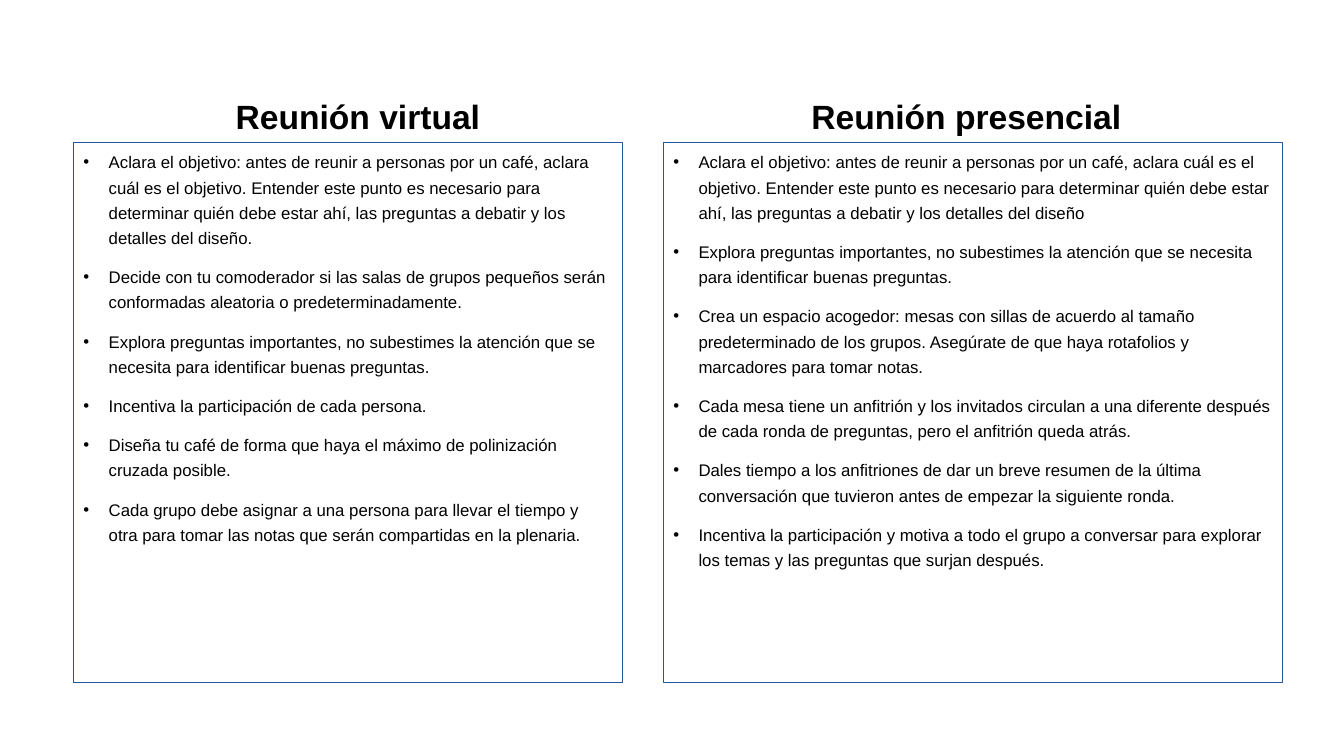
from dataclasses import dataclass

from lxml import etree
from pptx import Presentation
from pptx.dml.color import RGBColor
from pptx.enum.shapes import MSO_SHAPE
from pptx.enum.text import MSO_ANCHOR, PP_ALIGN
from pptx.oxml.ns import qn
from pptx.util import Inches, Pt

RECTANGLE = MSO_SHAPE.RECTANGLE
TOP, BOTTOM = MSO_ANCHOR.TOP, MSO_ANCHOR.BOTTOM
LEFT, CENTER = PP_ALIGN.LEFT, PP_ALIGN.CENTER

# Each column: heading, (left, width) of heading, (left, width) of panel, points
COLUMNS = [
    ("Reunión virtual", (0.73, 5.64), (0.73, 5.44), [
        "Aclara el objetivo: antes de reunir a personas por un café, aclara cuál es el "
        "objetivo. Entender este punto es necesario para determinar quién debe estar ahí, "
        "las preguntas a debatir y los detalles del diseño.",
        "Decide con tu comoderador si las salas de grupos pequeños serán conformadas "
        "aleatoria o predeterminadamente.",
        "Explora preguntas importantes, no subestimes la atención que se necesita para "
        "identificar buenas preguntas.",
        "Incentiva la participación de cada persona.",
        "Diseña tu café de forma que haya el máximo de polinización cruzada posible.",
        "Cada grupo debe asignar a una persona para llevar el tiempo y otra para tomar las "
        "notas que serán compartidas en la plenaria.",
    ]),
    ("Reunión presencial", (6.75, 5.67), (6.58, 6.14), [
        "Aclara el objetivo: antes de reunir a personas por un café, aclara cuál es el "
        "objetivo. Entender este punto es necesario para determinar quién debe estar ahí, "
        "las preguntas a debatir y los detalles del diseño",
        "Explora preguntas importantes, no subestimes la atención que se necesita para "
        "identificar buenas preguntas.",
        "Crea un espacio acogedor: mesas con sillas de acuerdo al tamaño predeterminado de "
        "los grupos. Asegúrate de que haya rotafolios y marcadores para tomar notas.",
        "Cada mesa tiene un anfitrión y los invitados circulan a una diferente después de "
        "cada ronda de preguntas, pero el anfitrión queda atrás.",
        "Dales tiempo a los anfitriones de dar un breve resumen de la última conversación "
        "que tuvieron antes de empezar la siguiente ronda.",
        "Incentiva la participación y motiva a todo el grupo a conversar para explorar los "
        "temas y las preguntas que surjan después.",
    ]),
]
HEADING_TOP, HEADING_HEIGHT = 0.51, 0.9
PANEL_TOP, PANEL_HEIGHT = HEADING_TOP + HEADING_HEIGHT, 5.36


@dataclass(frozen=True)
class Theme:
    font: str = "Arial"
    text: RGBColor = RGBColor(0, 0, 0)
    border: RGBColor = RGBColor(0x26, 0x55, 0xA6)
    border_width: float = 0.75
    heading_size: int = 24
    body_size: int = 12
    heading_spacing: float = 0.9
    body_spacing: float = 1.25
    space_before: int = 10
    bullet_indent: float = 0.25


THEME = Theme()


def write_paragraphs(text_frame, texts, size, spacing, alignment, bold=False):
    text_frame.word_wrap = True
    text_frame.text = "\n".join(texts)
    for paragraph in text_frame.paragraphs:
        paragraph.alignment = alignment
        paragraph.line_spacing = spacing
        paragraph.space_before = Pt(THEME.space_before)
        for run in paragraph.runs:
            run.font.name = THEME.font
            run.font.size = Pt(size)
            run.font.bold = bold
            run.font.color.rgb = THEME.text


def add_bullet(paragraph):
    properties = paragraph._p.get_or_add_pPr()
    indent = Inches(THEME.bullet_indent)
    properties.set("marL", str(indent))
    properties.set("indent", str(-indent))
    etree.SubElement(properties, qn("a:buFont"), typeface=THEME.font)
    etree.SubElement(properties, qn("a:buChar"), char="•")


def add_heading(slide, heading, left, width):
    box = slide.shapes.add_textbox(
        Inches(left), Inches(HEADING_TOP), Inches(width), Inches(HEADING_HEIGHT))
    box.text_frame.vertical_anchor = BOTTOM
    write_paragraphs(box.text_frame, [heading], THEME.heading_size,
                     THEME.heading_spacing, CENTER, bold=True)


def add_panel(slide, points, left, width):
    panel = slide.shapes.add_shape(
        RECTANGLE, Inches(left), Inches(PANEL_TOP), Inches(width), Inches(PANEL_HEIGHT))
    panel.shadow.inherit = False
    panel.fill.background()
    panel.line.color.rgb = THEME.border
    panel.line.width = Pt(THEME.border_width)
    panel.text_frame.vertical_anchor = TOP
    write_paragraphs(panel.text_frame, points, THEME.body_size, THEME.body_spacing, LEFT)
    for paragraph in panel.text_frame.paragraphs:
        add_bullet(paragraph)


def main():
    presentation = Presentation()
    presentation.slide_width = Inches(13.33)
    presentation.slide_height = Inches(7.5)
    slide = presentation.slides.add_slide(presentation.slide_layouts[6])
    for heading, heading_span, panel_span, points in COLUMNS:
        add_heading(slide, heading, *heading_span)
        add_panel(slide, points, *panel_span)
    presentation.save("out.pptx")


if __name__ == "__main__":
    main()
